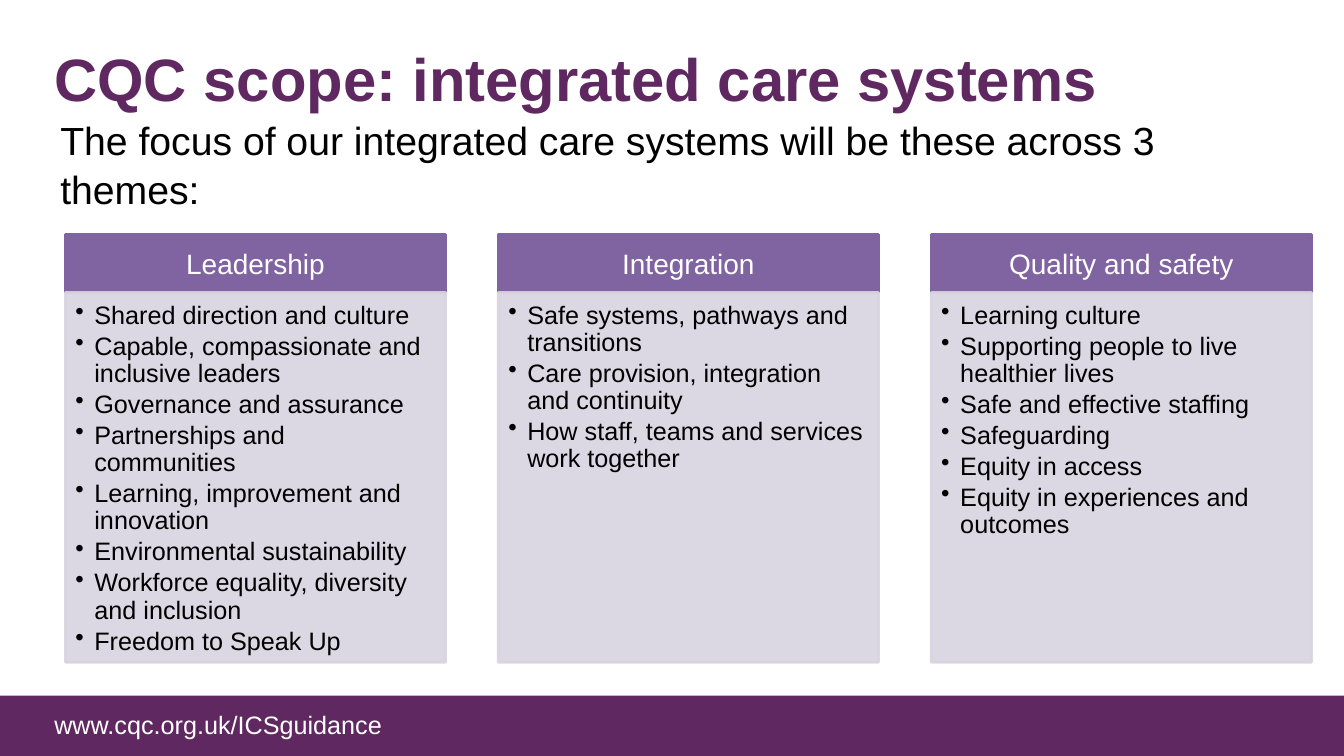
"""Build the slide on the scope of integrated care systems, with three themes in columns."""
from dataclasses import dataclass

from lxml import etree
from pptx import Presentation
from pptx.dml.color import RGBColor
from pptx.enum.shapes import MSO_SHAPE
from pptx.enum.text import MSO_ANCHOR, MSO_AUTO_SIZE, PP_ALIGN
from pptx.oxml.ns import qn
from pptx.util import Cm, Pt

RECTANGLE = MSO_SHAPE.RECTANGLE
TOP, MIDDLE = MSO_ANCHOR.TOP, MSO_ANCHOR.MIDDLE
LEFT, CENTER = PP_ALIGN.LEFT, PP_ALIGN.CENTER
NO_AUTOFIT = MSO_AUTO_SIZE.NONE


@dataclass(frozen=True)
class Theme:
    font: str = "Arial"
    plum: str = "5F2861"
    violet: str = "8064A2"
    lilac: str = "D8D3E0"
    black: str = "000000"
    white: str = "FFFFFF"
    title: float = 42.7
    lead: float = 28
    heading: float = 20
    body: float = 18


theme = Theme()


def write(shape, lines, size, color, align=LEFT, anchor=TOP, insets=(0.25, 0.25, 0.25, 0.25)):
    """Fill a shape with paragraphs of one style and return them."""
    frame = shape.text_frame
    frame.text = "\n".join(lines)
    frame.word_wrap = True
    frame.auto_size = NO_AUTOFIT
    frame.vertical_anchor = anchor
    frame.margin_left, frame.margin_top, frame.margin_right, frame.margin_bottom = map(Cm, insets)
    for para in frame.paragraphs:
        para.alignment = align
        para.font.name = theme.font
        para.font.size = Pt(size)
        para.font.color.rgb = RGBColor.from_string(color)
    return frame.paragraphs


def add_block(page, left, top, width, height, color):
    """Add a rectangle whose fill and outline share one colour."""
    block = page.shapes.add_shape(RECTANGLE, Cm(left), Cm(top), Cm(width), Cm(height))
    block.shadow.inherit = False
    block.fill.solid()
    block.fill.fore_color.rgb = RGBColor.from_string(color)
    block.line.color.rgb = RGBColor.from_string(color)
    block.line.width = Pt(2)
    return block


themes = {
    "Leadership": [
        "Shared direction and culture",
        "Capable, compassionate and inclusive leaders",
        "Governance and assurance",
        "Partnerships and communities",
        "Learning, improvement and innovation",
        "Environmental sustainability",
        "Workforce equality, diversity and inclusion",
        "Freedom to Speak Up",
    ],
    "Integration": [
        "Safe systems, pathways and transitions",
        "Care provision, integration and continuity",
        "How staff, teams and services work together",
    ],
    "Quality and safety": [
        "Learning culture",
        "Supporting people to live healthier lives",
        "Safe and effective staffing",
        "Safeguarding",
        "Equity in access",
        "Equity in experiences and outcomes",
    ],
}

deck = Presentation()
deck.slide_width, deck.slide_height = Cm(33.87), Cm(19.05)
page = deck.slides.add_slide(deck.slide_layouts[5])

footer_bar = add_block(page, 0, 17.53, 33.87, 1.52, theme.plum)
footer_bar.line.fill.background()

title = page.shapes.title
title.left, title.top, title.width, title.height = Cm(1.12), Cm(0.79), Cm(30.48), Cm(3.68)
write(title, ["CQC scope: integrated care systems"], theme.title, theme.plum)[0].font.bold = True

lead = page.shapes.add_textbox(Cm(1.27), Cm(2.62), Cm(31.78), Cm(3.1))
lead_text = "The focus of our integrated care systems will be these across 3 themes:"
write(lead, [lead_text], theme.lead, theme.black)[0].line_spacing = 1.05

column_left, column_pitch, column_width = 1.65, 10.91, 9.58
header_top, header_height, panel_height = 5.92, 1.45, 9.32
hanging = Cm(0.48)

for index, (heading, points) in enumerate(themes.items()):
    left = column_left + index * column_pitch
    header = add_block(page, left, header_top, column_width, header_height, theme.violet)
    write(header, [heading], theme.heading, theme.white, CENTER, MIDDLE, (0.4, 0.23, 0.4, 0.23))

    panel = add_block(page, left, header_top + header_height, column_width, panel_height, theme.lilac)
    for color in panel.element.spPr.iter(qn("a:srgbClr")):
        etree.SubElement(color, qn("a:alpha"), val="90000")
    for para in write(panel, points, theme.body, theme.black, insets=(0.25, 0.25, 0.36, 0.4)):
        para.line_spacing = 0.9
        para.space_after = Pt(2.7)
        properties = para.font._element.getparent()
        properties.set("marL", str(hanging))
        properties.set("indent", str(-hanging))
        bullet = etree.Element(qn("a:buChar"), char="•")
        para.font._element.addprevious(bullet)

address = page.shapes.add_textbox(Cm(1.12), Cm(17.75), Cm(16.94), Cm(1.02))
write(address, ["www.cqc.org.uk/ICSguidance"], theme.body, theme.white, insets=(0.25, 0.13, 0.25, 0.13))

deck.save("out.pptx")
